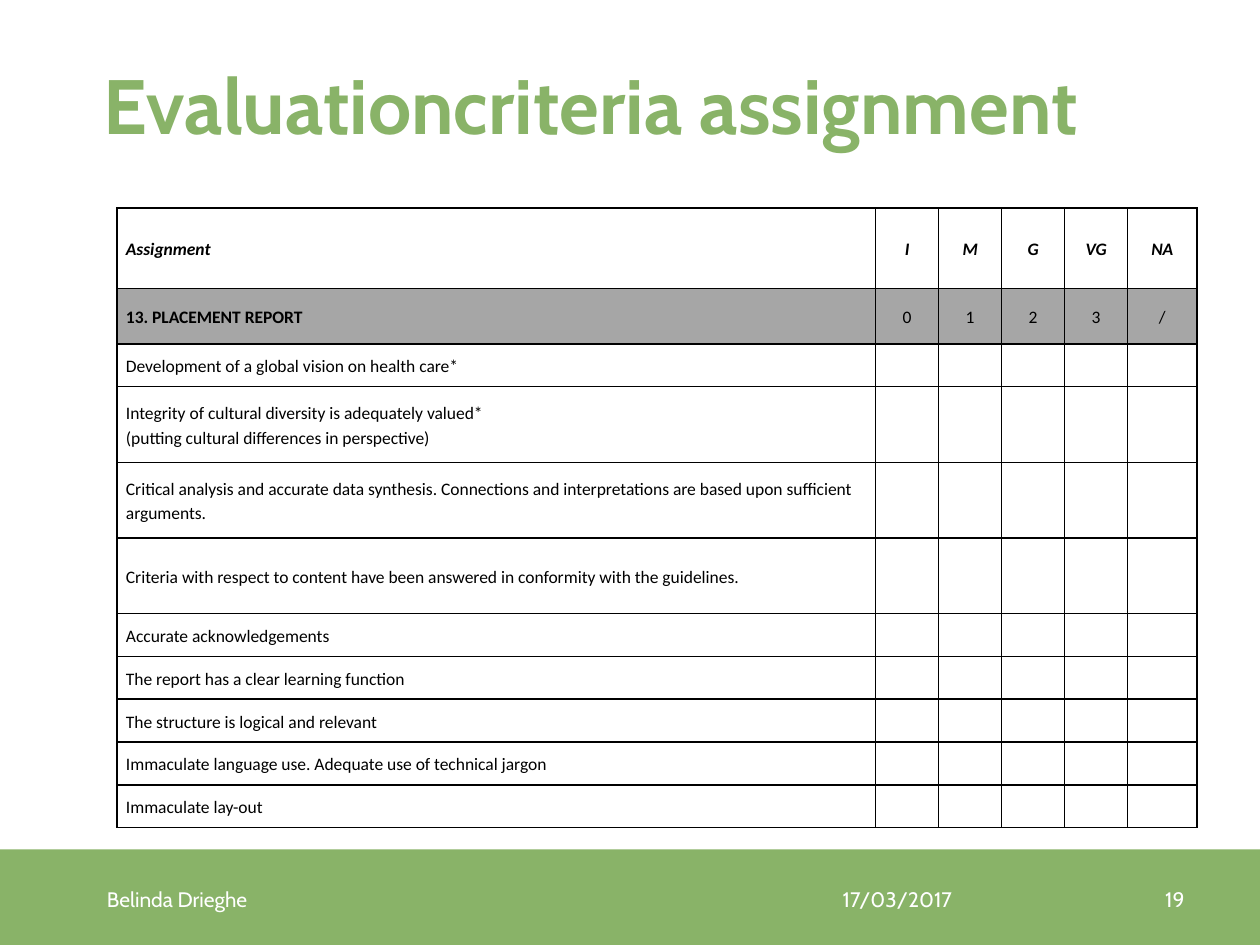
from dataclasses import dataclass

from lxml import etree
from pptx import Presentation
from pptx import util as u
from pptx.dml.color import RGBColor
from pptx.enum import shapes, text
from pptx.oxml import ns

COLORS = {"green": "89B368", "white": "FFFFFF", "black": "000000", "grey": "A6A6A6"}
COLUMN_WIDTHS = [6.02, 0.5, 0.5, 0.5, 0.5, 0.55]


@dataclass
class Label:
    wording: str
    left: float
    top: float
    width: float
    height: float
    size: int = 12
    color: str = "white"
    bold: bool = False
    align: text.PP_ALIGN = text.PP_ALIGN.LEFT


@dataclass
class Row:
    criterion: str
    height: float = 0.34
    grades: tuple[str, ...] = ("",) * 5
    fill: str = "white"
    bold_criterion: bool = False
    header: bool = False


LABELS = [
    Label("Evaluationcriteria assignment", 0.72, 0.2, 8.78, 1.25, 44, "green", True),
    Label("17/03/2017", 6.59, 6.94, 2.33, 0.4),
    Label("Belinda Drieghe", 0.75, 6.94, 5.79, 0.4),
    Label("19", 8.92, 6.94, 0.58, 0.4, align=text.PP_ALIGN.RIGHT),
]

ROWS = [
    Row("Assignment", 0.64, ("I", "M", "G", "VG", "NA"), bold_criterion=True, header=True),
    Row("13. PLACEMENT REPORT", 0.44, ("0", "1", "2", "3", "/"), "grey", bold_criterion=True),
    Row("Development of a global vision on health care*"),
    Row("Integrity of cultural diversity is adequately valued*\n"
        "(putting cultural differences in perspective)", 0.6),
    Row("Critical analysis and accurate data synthesis. Connections and "
        "interpretations are based upon sufficient arguments.", 0.6),
    Row("Criteria with respect to content have been answered in conformity "
        "with the guidelines.", 0.6),
    Row("Accurate acknowledgements"),
    Row("The report has a clear learning function"),
    Row("The structure is logical and relevant"),
    Row("Immaculate language use. Adequate use of technical jargon"),
    Row("Immaculate lay-out"),
]


def rgb(name: str) -> RGBColor:
    return RGBColor.from_string(COLORS[name])


def style_paragraph(paragraph, face: str, size: int, color: str, bold: bool) -> None:
    font = paragraph.font
    font.name, font.size, font.bold = face, u.Pt(size), bold
    font.color.rgb = rgb(color)


def add_label(page, label: Label) -> None:
    box = page.shapes.add_textbox(*map(u.Inches, (label.left, label.top, label.width, label.height)))
    frame = box.text_frame
    frame.word_wrap = True
    frame.vertical_anchor = text.MSO_ANCHOR.MIDDLE
    frame.text = label.wording
    paragraph = frame.paragraphs[0]
    paragraph.alignment = label.align
    style_paragraph(paragraph, "Cabin", label.size, label.color, label.bold)


def add_borders(cell) -> None:
    """Put a 1 pt black line on all four sides, ahead of the fill as the schema asks."""
    properties = cell._tc.get_or_add_tcPr()
    for position, side in enumerate(("lnL", "lnR", "lnT", "lnB")):
        line = etree.Element(ns.qn(f"a:{side}"), w=str(u.Pt(1)))
        fill = etree.SubElement(line, ns.qn("a:solidFill"))
        etree.SubElement(fill, ns.qn("a:srgbClr"), val=COLORS["black"])
        properties.insert(position, line)


def fill_cell(cell, wording: str, row: Row, is_grade: bool) -> None:
    cell.text = wording
    cell.vertical_anchor = text.MSO_ANCHOR.MIDDLE
    cell.margin_left = cell.margin_right = u.Inches(0.07)
    cell.margin_top = cell.margin_bottom = 0
    cell.fill.solid()
    cell.fill.fore_color.rgb = rgb(row.fill)
    add_borders(cell)
    bold = row.header or (row.bold_criterion and not is_grade)
    for paragraph in cell.text_frame.paragraphs:
        paragraph.alignment = text.PP_ALIGN.CENTER if is_grade else text.PP_ALIGN.LEFT
        paragraph.line_spacing = u.Pt(14)
        style_paragraph(paragraph, "Calibri", 10, "black", bold)
        paragraph.font.italic = row.header


def add_criteria_table(page) -> None:
    height = sum(row.height for row in ROWS)
    table = page.shapes.add_table(
        len(ROWS), len(COLUMN_WIDTHS), u.Inches(0.93), u.Inches(1.65),
        u.Inches(sum(COLUMN_WIDTHS)), u.Inches(height)).table
    table.first_row = table.horz_banding = False
    for column, width in zip(table.columns, COLUMN_WIDTHS):
        column.width = u.Inches(width)
    for table_row, row in zip(table.rows, ROWS):
        table_row.height = u.Inches(row.height)
        for index, wording in enumerate((row.criterion, *row.grades)):
            fill_cell(table_row.cells[index], wording, row, is_grade=index > 0)


def add_footer_band(page) -> None:
    band = page.shapes.add_shape(
        shapes.MSO_SHAPE.RECTANGLE, 0, u.Inches(6.74), u.Inches(10.04), u.Inches(0.79))
    band.shadow.inherit = False
    band.fill.solid()
    band.fill.fore_color.rgb = rgb("green")
    band.line.fill.background()


def main() -> None:
    deck = Presentation()
    deck.slide_width, deck.slide_height = u.Inches(10), u.Inches(7.5)
    page = deck.slides.add_slide(deck.slide_layouts[6])
    add_footer_band(page)
    add_criteria_table(page)
    for label in LABELS:
        add_label(page, label)
    deck.save("out.pptx")


if __name__ == "__main__":
    main()
